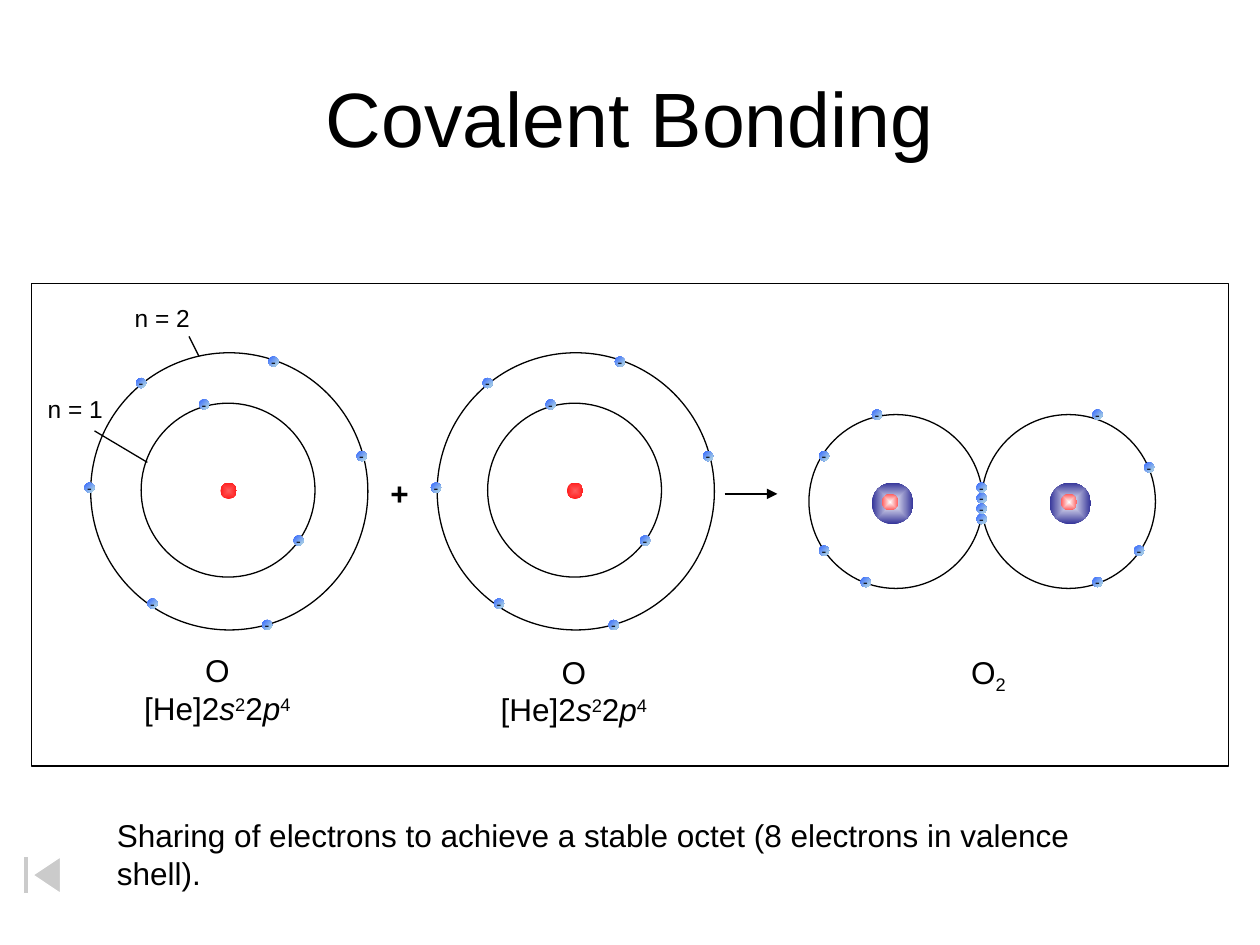
from lxml.etree import SubElement
from pptx import Presentation
from pptx.dml.color import RGBColor
from pptx.enum.shapes import MSO_CONNECTOR, MSO_SHAPE
from pptx.enum.text import MSO_ANCHOR, MSO_AUTO_SIZE, PP_ALIGN
from pptx.oxml.ns import qn
from pptx.util import Inches, Pt

# Content
COLORS = {
    "ink": "000000", "paper": "FFFFFF",
    "electron": "3366FF", "electron_edge": "BBE0E3",
    "core": "FF5B5B", "core_edge": "FF1D1D", "inner_shell": "333399",
}
ITALIC, SUPER, SUB, BOLD = {"italic": True}, {"baseline": 30}, {"baseline": -25}, {"bold": True}
OXYGEN = [
    [("O", {})],
    [("[He]2", {}), ("s", ITALIC), ("2", SUPER), ("2", {}), ("p", ITALIC), ("4", SUPER)],
]
SUMMARY = "Sharing of electrons to achieve a stable octet (8 electrons in valence shell)."
LEFT, CENTER = PP_ALIGN.LEFT, PP_ALIGN.CENTER
# paragraphs of (text, format) runs, box, size, alignment
LABELS = [
    ([[("n = 1", {})]], (0.28, 3.08, 0.64, 0.33), 14, LEFT),
    ([[("n = 2", {})]], (0.97, 2.36, 0.64, 0.33), 14, LEFT),
    (OXYGEN, (1.03, 5.12, 1.39, 0.7), 18, CENTER),
    (OXYGEN, (3.86, 5.13, 1.39, 0.7), 18, CENTER),
    ([[("+", BOLD)]], (3, 3.71, 0.35, 0.4), 18, LEFT),
    ([[("O", {}), ("2", SUB)]], (7.6, 5.13, 0.49, 0.4), 18, CENTER),
    ([[(SUMMARY, {})]], (0.83, 6.43, 8.49, 0.4), 18, LEFT),
]
# start, end, arrowhead
LINES = [
    ((1.5, 2.67), (1.58, 2.83), False),
    ((0.75, 3.42), (1.17, 3.67), False),
    ((5.75, 3.92), (6.17, 3.92), True),
]

# Geometry: atoms share one layout, shifted sideways
ATOM_LEFTS = [0.72, 3.47]
OUTER, INNER, ELECTRON, CORE, SHELL = 2.2, 1.38, 0.08, 0.13, 0.33
ATOM_TOP = 2.8
ATOM_ELECTRONS = [  # offsets from the atom's left, and tops
    (-0.05, 3.83), (0.86, 3.17), (1.61, 4.25), (1.41, 2.83),
    (0.45, 4.75), (1.36, 4.92), (2.11, 3.58), (0.36, 3),
]
MOLECULE_TOP = 3.29
MOLECULE = [  # orbit left, shell left, core left
    (6.42, 6.92, 7), (7.79, 8.33, 8.42),
]
MOLECULE_ELECTRONS = [
    (6.92, 3.25), (6.5, 3.58), (6.5, 4.33), (6.83, 4.58),
    (8.67, 3.25), (9.08, 3.67), (9, 4.33), (8.67, 4.58),
]
SHARED_ELECTRONS = [(7.75, 3.83 + i * 0.25 / 3) for i in range(4)]

presentation = Presentation()
presentation.slide_width, presentation.slide_height = Inches(10), Inches(7.5)
slide = presentation.slides.add_slide(presentation.slide_layouts[6])


def rgb(name):
    return RGBColor.from_string(COLORS[name])


def add_shape(kind, box, line=None):
    shape = slide.shapes.add_shape(kind, *map(Inches, box))
    shape.shadow.inherit = False
    shape.fill.background()
    if line:
        shape.line.color.rgb = rgb(line)
        shape.line.width = Pt(0.75)
    else:
        shape.line.fill.background()
    return shape


def add_circle(left, top, size, line=None):
    return add_shape(MSO_SHAPE.OVAL, (left, top, size, size), line)


def set_gradient(shape, names, radial):
    shape.fill.gradient()
    for stop, name in zip(shape.fill.gradient_stops, names):
        stop.color.rgb = rgb(name)
    if not radial:
        shape.fill.gradient_angle = 315
        return
    gradient = shape.element.spPr.find(qn("a:gradFill"))
    gradient.remove(gradient.find(qn("a:lin")))
    center = SubElement(gradient, qn("a:path"), {"path": "shape"})
    SubElement(center, qn("a:fillToRect"), dict.fromkeys("ltrb", "50000"))


def write(shape, paragraphs, size, alignment, **frame_format):
    frame = shape.text_frame
    for name, value in {"word_wrap": False, **frame_format}.items():
        setattr(frame, name, value)
    for i, runs in enumerate(paragraphs):
        paragraph = frame.add_paragraph() if i else frame.paragraphs[0]
        paragraph.alignment = alignment
        for text, run_format in runs:
            run = paragraph.add_run()
            run.text = text
            run.font.color.rgb = rgb("ink")
            values = {"name": "Arial", "size": Pt(size), **run_format}
            baseline = values.pop("baseline", None)
            for name, value in values.items():
                setattr(run.font, name, value)
            if baseline:
                run.font._element.set("baseline", str(baseline * 1000))


def add_electron(left, top):
    electron = add_circle(left, top, ELECTRON)
    set_gradient(electron, ("electron", "electron_edge"), radial=False)
    write(electron, [[("-", {})]], 8, CENTER, vertical_anchor=MSO_ANCHOR.MIDDLE)


def add_nucleus(left, top, size, names):
    set_gradient(add_circle(left, top, size), names, radial=True)


# Frame and title
add_shape(MSO_SHAPE.RECTANGLE, (0.25, 2.25, 9.5, 3.83), "ink")
title = slide.shapes.add_textbox(*map(Inches, (0.5, 0.3, 9, 1.25)))
write(title, [[("Covalent Bonding", {})]], 44, CENTER,
      word_wrap=True, vertical_anchor=MSO_ANCHOR.MIDDLE)

# Separate atoms
for atom_left in ATOM_LEFTS:
    add_circle(atom_left, ATOM_TOP, OUTER, "ink")
    add_circle(atom_left + 0.4, ATOM_TOP + 0.4, INNER, "ink")
    add_nucleus(atom_left + 1.03, 3.83, CORE, ("core", "core_edge"))
    for offset, top in ATOM_ELECTRONS:
        add_electron(atom_left + offset, top)

# Bonded molecule
for orbit_left, shell_left, core_left in MOLECULE:
    add_circle(orbit_left, MOLECULE_TOP, INNER, "ink")
    add_nucleus(shell_left, 3.83, SHELL, ("paper", "inner_shell"))
    add_nucleus(core_left, 3.92, CORE, ("paper", "core"))
for left, top in MOLECULE_ELECTRONS + SHARED_ELECTRONS:
    add_electron(left, top)

# Leader lines and reaction arrow
for start, end, arrowhead in LINES:
    connector = slide.shapes.add_connector(
        MSO_CONNECTOR.STRAIGHT, *map(Inches, start + end))
    connector.line.color.rgb = rgb("ink")
    connector.line.width = Pt(0.75)
    if arrowhead:
        SubElement(connector.line._get_or_add_ln(), qn("a:tailEnd"), {"type": "triangle"})
    SubElement(connector._element.spPr, qn("a:effectLst"))

# Labels
for paragraphs, box, size, alignment in LABELS:
    label = slide.shapes.add_textbox(*map(Inches, box))
    write(label, paragraphs, size, alignment, auto_size=MSO_AUTO_SIZE.SHAPE_TO_FIT_TEXT)

# Half-transparent button back to the beginning
button = add_shape(MSO_SHAPE.ACTION_BUTTON_BEGINNING, (0, 6.75, 0.67, 0.39), "paper")
button.fill.solid()
button.fill.fore_color.rgb = rgb("paper")
button_color = button.element.spPr.find(qn("a:solidFill")).find(qn("a:srgbClr"))
SubElement(button_color, qn("a:alpha"), {"val": "50000"})

presentation.save("out.pptx")
